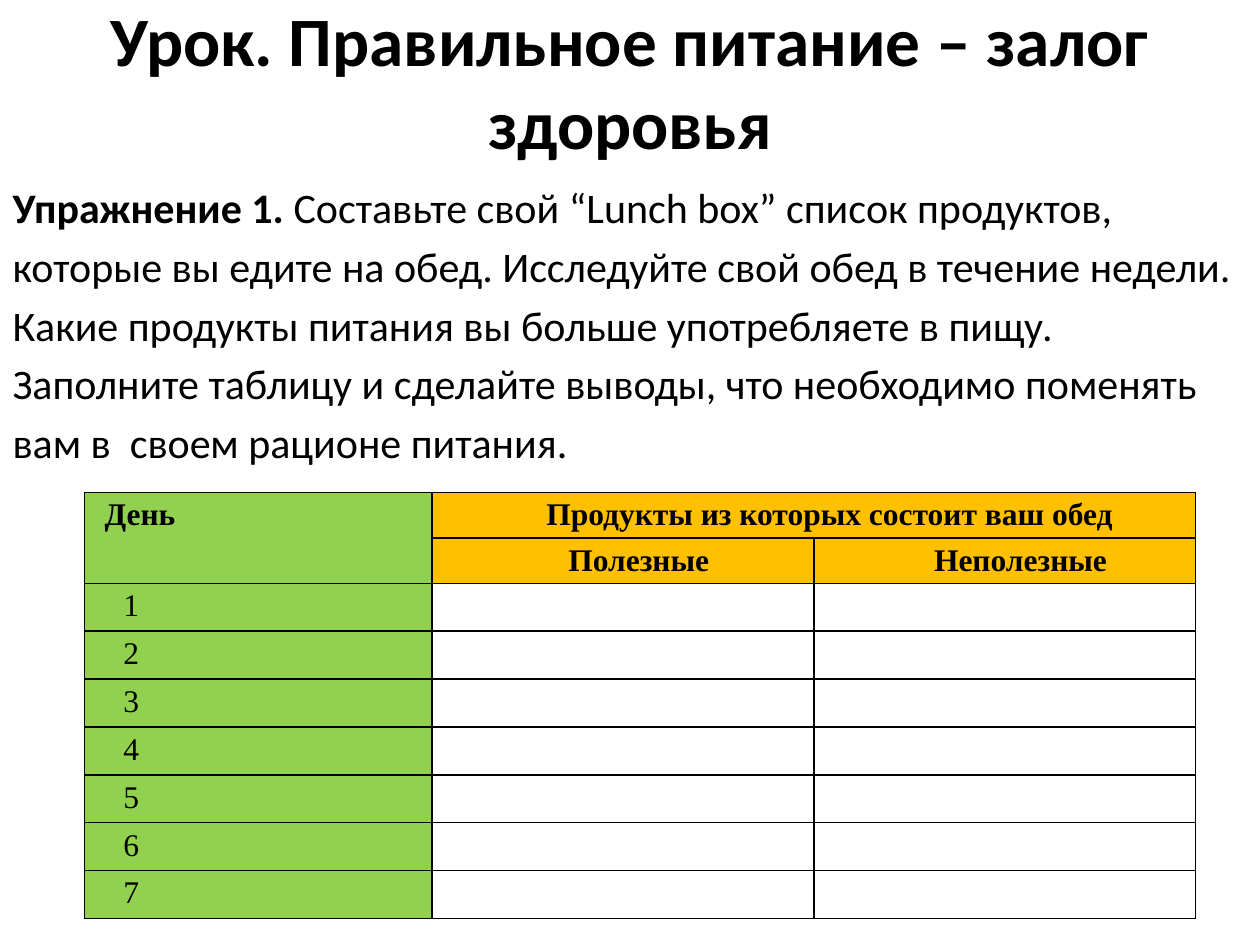
from lxml import etree
from pptx import Presentation
from pptx.dml.color import RGBColor
from pptx.enum.text import MSO_ANCHOR, MSO_AUTO_SIZE, PP_ALIGN
from pptx.oxml.ns import qn
from pptx.util import Inches, Pt

BLACK, GREEN, AMBER = "000000", "92D050", "FFC000"
TASK_LABEL = "Упражнение 1. "
TASK_LINES = [
    "Составьте свой “Lunch box” список продуктов,",
    "которые вы едите на обед. Исследуйте свой обед в течение недели.",
    "Какие продукты питания вы больше употребляете в пищу.",
    "Заполните таблицу и сделайте выводы, что необходимо поменять",
    "вам в  своем рационе питания.",
]
DAYS = 7
HEADER_ROWS = 2


def rgb(value):
    return RGBColor.from_string(value)


def set_font(font, name, size, bold=False):
    font.name = name
    font.size = Pt(size)
    font.bold = bold
    font.color.rgb = rgb(BLACK)


def place(sp, left, top, width, height):
    sp.left, sp.top = Inches(left), Inches(top)
    sp.width, sp.height = Inches(width), Inches(height)
    sp.text_frame.word_wrap = True
    sp.text_frame.auto_size = MSO_AUTO_SIZE.NONE


def indent(p, left, first=0.0):
    pPr = p._p.get_or_add_pPr()
    pPr.set("marL", str(Inches(left)))
    pPr.set("indent", str(Inches(first)))
    return pPr


def add_title(sp):
    place(sp, 0.5, 0.13, 9, 1.02)
    sp.text_frame.vertical_anchor = MSO_ANCHOR.MIDDLE
    p = sp.text_frame.paragraphs[0]
    p.text = "Урок. Правильное питание – залог здоровья"
    p.alignment = PP_ALIGN.CENTER
    set_font(p.font, "Calibri", 39.6, bold=True)


def add_task(sp):
    place(sp, 0, 1.39, 10, 2.6)
    tf = sp.text_frame
    for i, line in enumerate(TASK_LINES):
        p = tf.add_paragraph() if i else tf.paragraphs[0]
        etree.SubElement(indent(p, 0.38, -0.38), qn("a:buNone"))
        set_font(p.font, "Calibri", 24)
        if i == 0:
            r = p.add_run()
            r.text = TASK_LABEL
            r.font.bold = True
        p.add_run().text = line


def set_borders(cell):
    tcPr = cell._tc.get_or_add_tcPr()
    for i, side in enumerate(("lnL", "lnR", "lnT", "lnB")):
        ln = etree.Element(qn(f"a:{side}"), w=str(Pt(1)))
        fill = etree.SubElement(ln, qn("a:solidFill"))
        etree.SubElement(fill, qn("a:srgbClr"), val=BLACK)
        tcPr.insert(i, ln)  # borders come before the fill


def format_cell(cell, color=None):
    cell.margin_left = cell.margin_right = Inches(0.06)
    cell.margin_top = cell.margin_bottom = 0
    if color:
        cell.fill.solid()
        cell.fill.fore_color.rgb = rgb(color)
    else:
        cell.fill.background()
    set_borders(cell)


def write_cell(cell, text, align, left=0.25, bold=False):
    p = cell.text_frame.paragraphs[0]
    p.text = text
    p.alignment = align
    p.line_spacing = 1.15
    indent(p, left)
    set_font(p.font, "Times New Roman", 18, bold)


def add_food_table(slide):
    rows = HEADER_ROWS + DAYS
    frame = slide.shapes.add_table(
        rows, 3, Inches(0.67), Inches(3.91), Inches(8.82), Inches(3.39))
    table = frame.table
    table.first_row = table.horz_banding = False
    for column, width in zip(table.columns, (2.76, 3.03, 3.03)):
        column.width = Inches(width)

    # Green day column, amber headings, empty cells to fill in
    for i, row in enumerate(table.rows):
        header = i < HEADER_ROWS
        row.height = Inches(0.36 if header else 0.38)
        for j, cell in enumerate(row.cells):
            format_cell(cell, GREEN if j == 0 else AMBER if header else None)

    # Headings
    table.cell(0, 0).merge(table.cell(1, 0))
    table.cell(0, 1).merge(table.cell(0, 2))
    write_cell(table.cell(0, 0), "День", PP_ALIGN.JUSTIFY, 0.1, bold=True)
    headings = [(0, 1, "Продукты из которых состоит ваш обед"),
                (1, 1, "Полезные"), (1, 2, "Неполезные")]
    for i, j, text in headings:
        write_cell(table.cell(i, j), text, PP_ALIGN.CENTER, bold=True)

    # Day numbers
    for day in range(1, DAYS + 1):
        cell = table.cell(HEADER_ROWS + day - 1, 0)
        write_cell(cell, str(day), PP_ALIGN.JUSTIFY)


def main():
    prs = Presentation()
    prs.slide_width, prs.slide_height = Inches(10), Inches(7.5)
    slide = prs.slides.add_slide(prs.slide_layouts[1])
    add_title(slide.shapes.title)
    add_task(slide.placeholders[1])
    add_food_table(slide)
    prs.save("out.pptx")


if __name__ == "__main__":
    main()
